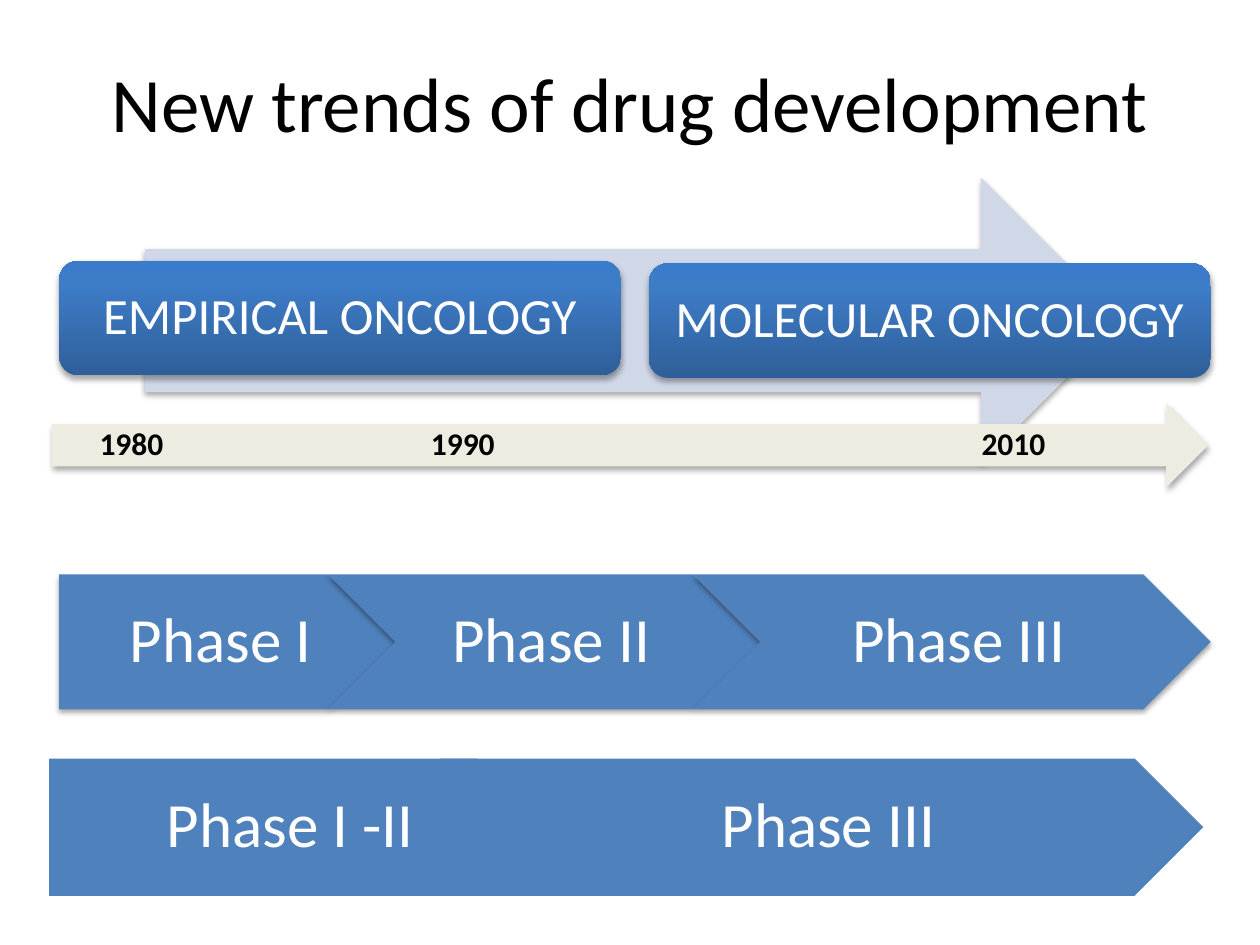
from copy import deepcopy
from dataclasses import dataclass

from lxml import etree
from pptx import Presentation
from pptx.dml.color import RGBColor
from pptx.enum.shapes import MSO_SHAPE as SHAPE
from pptx.enum.text import MSO_ANCHOR as ANCHOR, PP_ALIGN as ALIGN
from pptx.oxml.ns import qn
from pptx.util import Inches, Pt


@dataclass(frozen=True)
class Theme:
    font: str = "Calibri"
    black: str = "000000"
    white: str = "FFFFFF"
    phase: str = "4F81BD"
    trend: str = "D0D8E8"
    timeline: str = "EEECE1"
    era: tuple = ((0, "2F5F99"), (0.8, "3D7CC7"), (1, "3A7CCB"))
    title_size: int = 44
    phase_size: int = 36
    era_size: int = 29
    year_size: int = 18


THEME = Theme()


def set_text(s, text, size, color, insets, bold=False, align=ALIGN.CENTER,
             anchor=ANCHOR.MIDDLE, line_spacing=0.9):
    """Write one paragraph; insets are left, top, right, bottom in inches."""
    tf = s.text_frame
    sides = ("margin_left", "margin_top", "margin_right", "margin_bottom")
    frame = dict(zip(sides, map(Inches, insets)), word_wrap=True, vertical_anchor=anchor)
    for name, value in frame.items():
        setattr(tf, name, value)
    p = tf.paragraphs[0]
    p.alignment, p.line_spacing = align, line_spacing
    r = p.add_run()
    r.text = text
    font = {"name": THEME.font, "size": Pt(size), "bold": bold}
    for name, value in font.items():
        setattr(r.font, name, value)
    r.font.color.rgb = RGBColor.from_string(color)
    return p


def add_shadow(s):
    effects = s._element.spPr.find(qn("a:effectLst"))
    shadow = etree.SubElement(effects, qn("a:outerShdw"), blurRad=str(Pt(3.1)),
                              dist=str(Pt(1.8)), dir="5400000", rotWithShape="0")
    color = etree.SubElement(shadow, qn("a:srgbClr"), val=THEME.black)
    etree.SubElement(color, qn("a:alpha"), val="35000")


def fill_gradient(s, stops):
    """Fill from bottom to top with (position, colour) stops."""
    s.fill.gradient()
    s.fill.gradient_angle = 90
    stop_list = s._element.spPr.find(qn("a:gradFill")).find(qn("a:gsLst"))
    while len(stop_list) < len(stops):
        stop_list.append(deepcopy(stop_list[0]))
    for stop, (position, color) in zip(s.fill.gradient_stops, stops):
        stop.position = position
        stop.color.rgb = RGBColor.from_string(color)


def add_block(slide, kind, box, fill, shadow=True):
    s = slide.shapes.add_shape(kind, *map(Inches, box))
    s.shadow.inherit = False
    s.line.fill.background()
    if isinstance(fill, str):
        s.fill.solid()
        s.fill.fore_color.rgb = RGBColor.from_string(fill)
    else:
        fill_gradient(s, fill)
    if shadow:
        add_shadow(s)
    return s


def add_title(slide, box, text):
    s = slide.shapes.add_textbox(*map(Inches, box))
    set_text(s, text, THEME.title_size, THEME.black, (0.1, 0.05, 0.1, 0.05),
             anchor=ANCHOR.TOP, line_spacing=1)


def add_eras(slide, box, eras):
    """Place the wide arrow in the box, and each era at its own left and top."""
    add_block(slide, SHAPE.RIGHT_ARROW, box, THEME.trend)
    for left, top, text in eras:
        s = add_block(slide, SHAPE.ROUNDED_RECTANGLE, (left, top, 4.46, 0.91), THEME.era)
        set_text(s, text, THEME.era_size, THEME.white, (0.12,) * 4)


def add_timeline(slide, box, years, stops):
    """Place the years on an arrow, each after the first at its tab stop."""
    s = add_block(slide, SHAPE.RIGHT_ARROW, box, THEME.timeline)
    p = set_text(s, "\t".join(years), THEME.year_size, THEME.black, (0.38, 0, 0, 0),
                 bold=True, align=ALIGN.LEFT)
    tabs = etree.SubElement(p._p.get_or_add_pPr(), qn("a:tabLst"))
    for stop in stops:
        etree.SubElement(tabs, qn("a:tab"), pos=str(Inches(stop)), algn="l")


def add_phases(slide, box, phases, shadow):
    """Chain phases of given widths; each overlaps the one before to fill the box."""
    left, top, width, height = box
    overlap = (sum(w for _, w in phases) - width) / (len(phases) - 1)
    for i, (text, w) in enumerate(phases):
        kind, inset = (SHAPE.CHEVRON, 0.16) if i else (SHAPE.PENTAGON, 0.21)
        s = add_block(slide, kind, (left, top, w, height), THEME.phase, shadow)
        set_text(s, text, THEME.phase_size, THEME.white, (inset, 0.1, 0.05, 0.1))
        left += w - overlap


def main():
    prs = Presentation()
    prs.slide_width, prs.slide_height = Inches(10), Inches(7.5)
    slide = prs.slides.add_slide(prs.slide_layouts[6])
    add_eras(slide, (1.15, 1.41, 7.77, 2.27),
             [(0.47, 2.07, "EMPIRICAL ONCOLOGY"), (5.15, 2.09, "MOLECULAR ONCOLOGY")])
    add_timeline(slide, (0.41, 3.2, 9.18, 0.67), ["1980", "1990", "2010"], [2.63, 7])
    add_phases(slide, (0.47, 4.56, 9.14, 1.07),
               [("Phase I", 2.67), ("Phase II", 3.43), ("Phase III", 4.11)], shadow=True)
    add_phases(slide, (0.39, 6.02, 9.16, 1.09),
               [("Phase I -II", 3.94), ("Phase III", 6.06)], shadow=False)
    add_title(slide, (0, 0.39, 10, 0.63), "New trends of drug development")
    prs.save("out.pptx")


if __name__ == "__main__":
    main()
